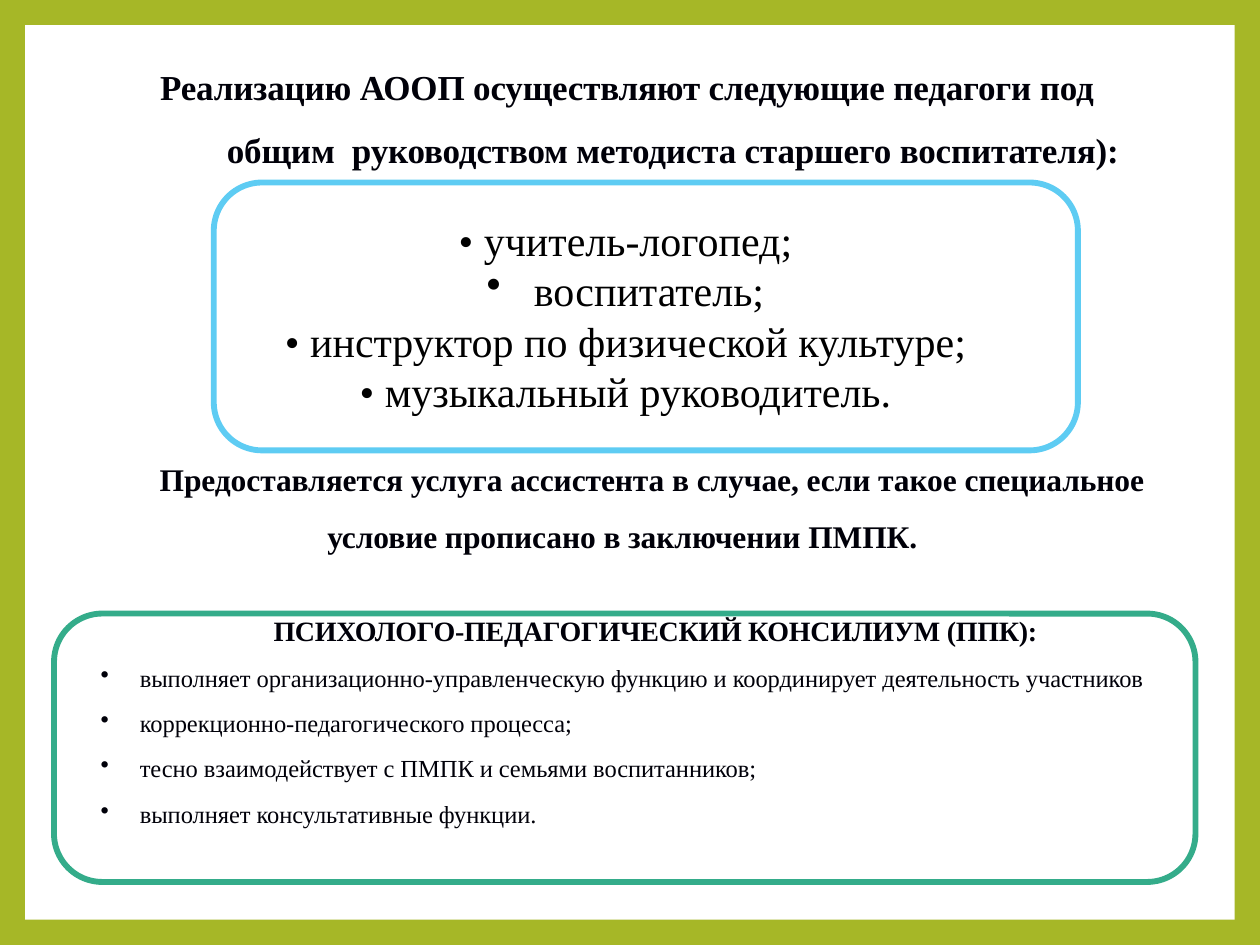
"""Build a slide on the teachers and the council that carry out the programme."""
import pptx
import pptx.dml.color
import pptx.enum.shapes
import pptx.enum.text
import pptx.oxml
import pptx.util
from pptx.util import Cm

CENTER = pptx.enum.text.PP_ALIGN.CENTER
LEFT = pptx.enum.text.PP_ALIGN.LEFT
SHAPES = pptx.enum.shapes.MSO_SHAPE


def paint(color_format, color):
    color_format.rgb = pptx.dml.color.RGBColor.from_string(color)


def add_text(box, lines, size, color, align=LEFT, bold=False, margin=0, indent=0,
             bullet=False, line_spacing=1.0, before=0, tracking=0):
    frame = box.text_frame
    for line in lines:
        para = frame.paragraphs[0] if not frame.text else frame.add_paragraph()
        para.text = line
        para.alignment = align
        para.line_spacing = line_spacing
        para.space_before = pptx.util.Pt(before)
        para.font.name = "Times New Roman"
        para.font.size = pptx.util.Pt(size)
        para.font.bold = bold
        paint(para.font.color, color)
        properties = para._p.get_or_add_pPr()
        properties.set("marL", str(Cm(margin)))
        properties.set("indent", str(Cm(indent)))
        if bullet:
            mark = pptx.oxml.parse_xml(
                '<a:buChar xmlns:a="http://schemas.openxmlformats.org/drawingml/2006/main" char="•"/>')
            properties.insert_element_before(mark, "a:tabLst", "a:defRPr", "a:extLst")
        for span in para.runs:
            span._r.get_or_add_rPr().set("spc", str(tracking))


deck = pptx.Presentation()
deck.slide_width, deck.slide_height = Cm(25.4), Cm(19.05)
page = deck.slides.add_slide(deck.slide_layouts[6])
page.background.fill.solid()
paint(page.background.fill.fore_color, "A6B727")

panels = [
    (SHAPES.RECTANGLE, 0.51, 0.51, 24.38, 18.03, None),
    (SHAPES.ROUNDED_RECTANGLE, 1.09, 12.37, 23.01, 5.41, "34AC8A"),
    (SHAPES.ROUNDED_RECTANGLE, 4.31, 3.68, 17.42, 5.4, "5ECCF3"),
]
for kind, left, top, width, height, border in panels:
    panel = page.shapes.add_shape(kind, Cm(left), Cm(top), Cm(width), Cm(height))
    panel.shadow.inherit = False
    panel.fill.solid()
    paint(panel.fill.fore_color, "FFFFFF")
    if border:
        panel.adjustments[0] = 0.18
        panel.line.width = pptx.util.Pt(3.35)
        paint(panel.line.color, border)
    else:
        panel.line.fill.background()

boxes = []
for left, top, width, height in [
    (1.98, 0.9, 21.26, 2.5),
    (5.36, 4.32, 14.5, 4.11),
    (1.98, 8.89, 21.5, 2.3),
    (1.98, 12.37, 21.26, 4.6),
]:
    box = page.shapes.add_textbox(Cm(left), Cm(top), Cm(width), Cm(height))
    frame = box.text_frame
    frame.word_wrap = True
    frame.margin_left = frame.margin_right = frame.margin_top = frame.margin_bottom = 0
    boxes.append(box)
title, teachers, assistant, council = boxes

add_text(title, ["Реализацию АООП осуществляют следующие педагоги под\v"
                 "общим  руководством методиста старшего воспитателя):"],
         20, "000009", CENTER, True, 1.9, -1.85, line_spacing=1.5, tracking=-10)

add_text(teachers, ["• учитель-логопед;"], 24, "000000", CENTER)
add_text(teachers, ["воспитатель;"], 24, "000000", CENTER, False, 0.95, -0.95, True)
add_text(teachers, ["• инструктор по физической культуре;", "• музыкальный руководитель."],
         24, "000000", CENTER)

add_text(assistant, ["Предоставляется услуга ассистента в случае, если такое специальное\v"
                     "условие прописано в заключении ПМПК."],
         18, "000009", LEFT, True, 4.62, -3.38, line_spacing=1.5, tracking=-5)

add_text(council, ["ПСИХОЛОГО-ПЕДАГОГИЧЕСКИЙ КОНСИЛИУМ (ППК):"],
         16, "000009", CENTER, True, 1.22, tracking=-15)
add_text(council, ["выполняет организационно-управленческую функцию и координирует деятельность участников",
                   "коррекционно-педагогического процесса;",
                   "тесно взаимодействует с ПМПК и семьями воспитанников;",
                   "выполняет консультативные функции."],
         14, "000009", margin=0.84, indent=-0.79, bullet=True, before=9, tracking=-5)

deck.save("out.pptx")
